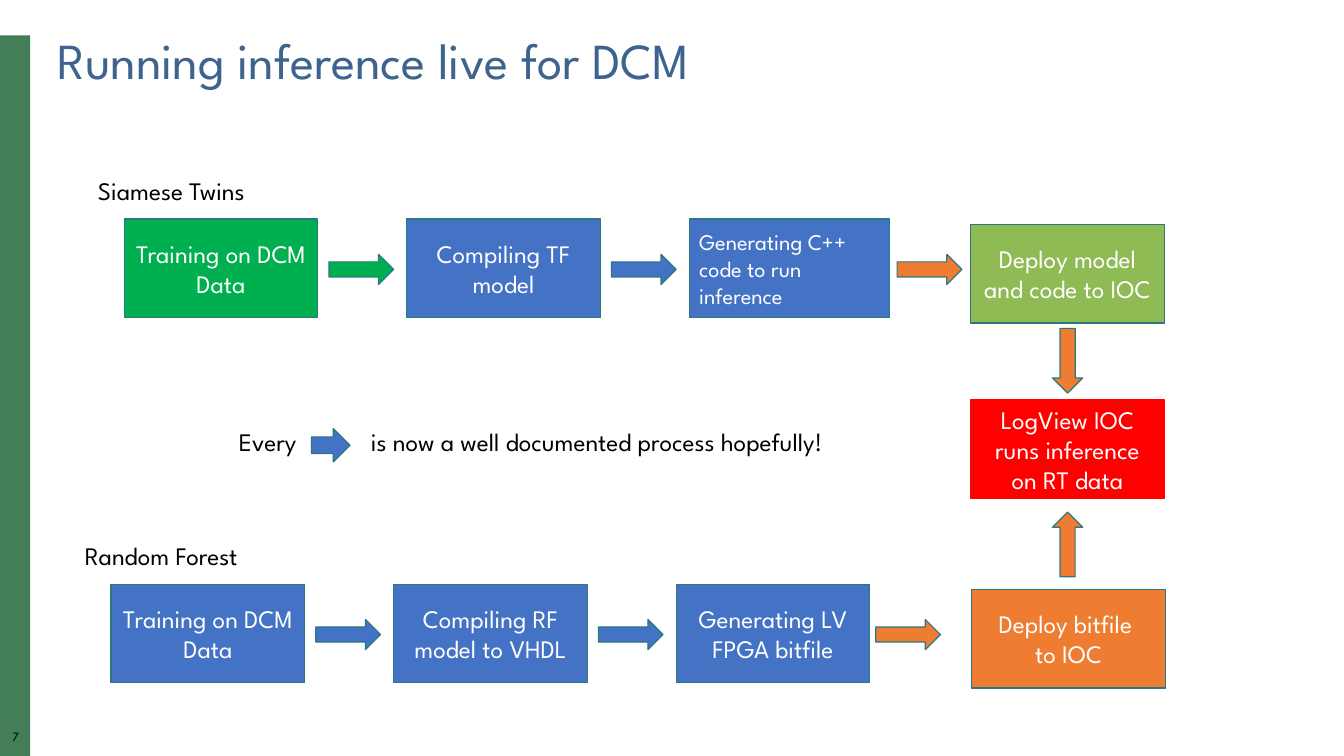
from dataclasses import dataclass

from pptx import Presentation
from pptx import util as u
from pptx.dml.color import RGBColor
from pptx.enum import shapes, text
from pptx.oxml import parse_xml
from pptx.oxml.ns import nsdecls

FONT = "League Spartan"
WHITE = RGBColor(0xFF, 0xFF, 0xFF)
BLACK = RGBColor(0x00, 0x00, 0x00)
TITLE_BLUE = RGBColor(0x3D, 0x63, 0x8E)
SIDEBAR_GREEN = RGBColor(0x44, 0x7E, 0x59)
OUTLINE = RGBColor(0x2C, 0x78, 0x80)
GREEN = RGBColor(0x00, 0xB0, 0x50)
BLUE = RGBColor(0x44, 0x72, 0xC4)
ORANGE = RGBColor(0xEE, 0x7D, 0x31)
LIME = RGBColor(0x8F, 0xBB, 0x55)
RED = RGBColor(0xFF, 0x00, 0x00)

STEP_WIDTH, STEP_HEIGHT, STEP_PITCH = 4.88, 2.49, 7.12
ARROW_WIDTH, ARROW_HEIGHT = 1.63, 0.76
FINAL_LEFT = 24.46
LEFT, CENTER = text.PP_ALIGN.LEFT, text.PP_ALIGN.CENTER


@dataclass
class Step:
    words: str
    fill: RGBColor
    left: float
    top: float
    width: float = STEP_WIDTH
    size: int = 18
    align: text.PP_ALIGN = CENTER
    outline: RGBColor = OUTLINE


@dataclass
class Arrow:
    fill: RGBColor
    left: float
    top: float
    rotation: int = 0
    width: float = ARROW_WIDTH
    height: float = ARROW_HEIGHT


@dataclass
class Label:
    words: str
    left: float
    top: float
    width: float
    height: float = 1.02
    size: int = 18
    align: text.PP_ALIGN = LEFT
    tab_stop: float | None = None


@dataclass
class Pipeline:
    name: str
    left: float
    top: float
    steps: list[Step]
    arrow_fills: list[RGBColor]
    last_arrow_left: float


def column(left: float, index: int) -> float:
    return left + index * STEP_PITCH


def write(frame, words: str, size: int, color: RGBColor, align: text.PP_ALIGN,
          tab_stop: float | None = None):
    frame.word_wrap = True
    frame.text = words
    para = frame.paragraphs[0]
    para.alignment = align
    if tab_stop is not None:
        para._p.get_or_add_pPr().append(parse_xml(
            f'<a:tabLst {nsdecls("a")}><a:tab pos="{u.Cm(tab_stop)}" algn="l"/></a:tabLst>'))
    para.font.name = FONT
    para.font.size = u.Pt(size)
    para.font.color.rgb = color
    return para


def add_block(page, kind, left: float, top: float, width: float, height: float,
              fill: RGBColor, outline: RGBColor | None):
    block = page.shapes.add_shape(kind, u.Cm(left), u.Cm(top), u.Cm(width), u.Cm(height))
    block.shadow.inherit = False
    block.fill.solid()
    block.fill.fore_color.rgb = fill
    if outline is None:
        block.line.fill.background()
    else:
        block.line.color.rgb = outline
        block.line.width = u.Pt(0.85)
    return block


def draw_step(page, step: Step) -> None:
    box = add_block(page, shapes.MSO_SHAPE.RECTANGLE, step.left, step.top,
                    step.width, STEP_HEIGHT, step.fill, step.outline)
    box.text_frame.vertical_anchor = text.MSO_ANCHOR.MIDDLE
    write(box.text_frame, step.words, step.size, WHITE, step.align)


def draw_arrow(page, arrow: Arrow) -> None:
    block = add_block(page, shapes.MSO_SHAPE.RIGHT_ARROW, arrow.left, arrow.top,
                      arrow.width, arrow.height, arrow.fill, OUTLINE)
    block.rotation = arrow.rotation


def draw_label(page, label: Label):
    box = page.shapes.add_textbox(u.Cm(label.left), u.Cm(label.top),
                                  u.Cm(label.width), u.Cm(label.height))
    write(box.text_frame, label.words, label.size, BLACK, label.align, label.tab_stop)
    return box


def draw_pipeline(page, pipeline: Pipeline) -> None:
    draw_label(page, Label(pipeline.name, pipeline.left - 0.91, pipeline.top - 1.22, 5.1))
    for step in pipeline.steps:
        draw_step(page, step)
    for index, fill in enumerate(pipeline.arrow_fills):
        last = index == len(pipeline.arrow_fills) - 1
        left = pipeline.last_arrow_left if last else column(pipeline.left, index) + 5.16
        draw_arrow(page, Arrow(fill, left, pipeline.top + 0.89))


def draw_remark(page) -> None:
    draw_label(page, Label("Every\tis now a well documented process hopefully!",
                           5.77, 10.62, 18.67, tab_stop=3.33))
    draw_arrow(page, Arrow(BLUE, 7.85, 10.8, width=0.97, height=0.84))


def draw_page_number(page) -> None:
    number = draw_label(page, Label("7", 0, 18.4, 0.79, 0.43, 9, CENTER))
    frame = number.text_frame
    frame.margin_left = frame.margin_right = frame.margin_top = frame.margin_bottom = 0
    frame.paragraphs[0].line_spacing = 0.9


def draw_title(page) -> None:
    title = page.shapes.title
    title.left, title.top = u.Cm(1.19), u.Cm(0.76)
    title.width, title.height = u.Cm(31.75), u.Cm(1.65)
    title.text_frame.vertical_anchor = text.MSO_ANCHOR.MIDDLE
    para = write(title.text_frame, "Running inference live for DCM", 36, TITLE_BLUE, LEFT)
    para.line_spacing = 0.9


def main() -> None:
    deck = Presentation()
    deck.slide_width, deck.slide_height = u.Cm(33.87), u.Cm(19.05)
    page = deck.slides.add_slide(deck.slide_layouts[5])

    add_block(page, shapes.MSO_SHAPE.RECTANGLE, 0, 0.89, 0.76, 18.16, SIDEBAR_GREEN, None)
    draw_page_number(page)
    draw_title(page)

    twins_left, twins_top = 3.13, 5.52
    forest_left, forest_top = 2.8, 14.72
    pipelines = [
        Pipeline("Siamese Twins", twins_left, twins_top, [
            Step("Training on DCM Data", GREEN, twins_left, twins_top),
            Step("Compiling TF model", BLUE, column(twins_left, 1), twins_top),
            Step("Generating C++\vcode to run inference", BLUE, column(twins_left, 2),
                 twins_top, 5.05, 16, LEFT),
            Step("Deploy model and code to IOC", LIME, FINAL_LEFT, 5.65),
        ], [GREEN, BLUE, ORANGE], 22.61),
        Pipeline("Random Forest", forest_left, forest_top, [
            Step("Training on DCM Data", BLUE, forest_left, forest_top),
            Step("Compiling RF model to VHDL", BLUE, column(forest_left, 1), forest_top),
            Step("Generating LV\vFPGA bitfile", BLUE, column(forest_left, 2), forest_top),
            Step("Deploy bitfile \vto IOC", ORANGE, FINAL_LEFT + 0.03, 14.85),
        ], [BLUE, BLUE, ORANGE], 22.07),
    ]
    for pipeline in pipelines:
        draw_pipeline(page, pipeline)

    draw_step(page, Step("LogView IOC runs inference on RT data", RED,
                         FINAL_LEFT, 10.08, outline=RED))
    for top, rotation in ((8.71, 90), (13.34, 270)):
        draw_arrow(page, Arrow(ORANGE, 26.09, top, rotation))
    draw_remark(page)

    deck.save("out.pptx")


if __name__ == "__main__":
    main()
